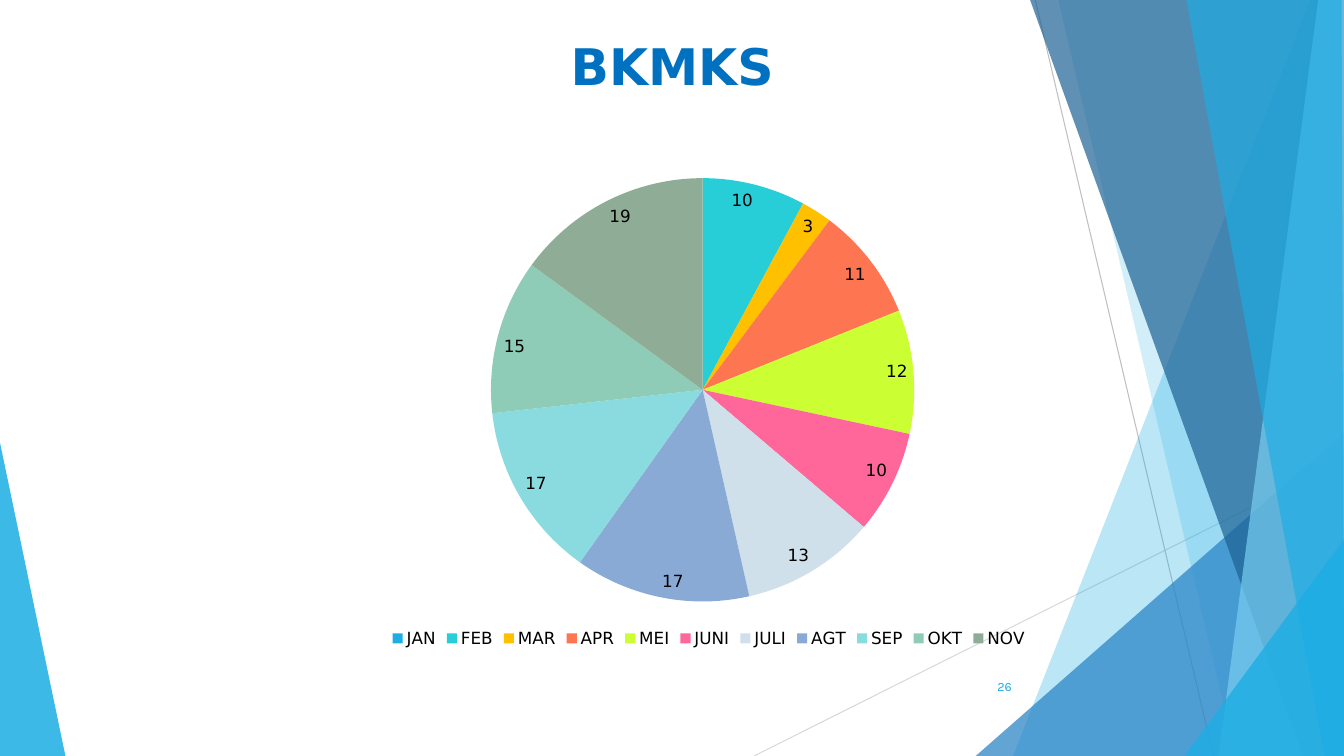
import pptx
import pptx.chart.data
import pptx.dml.color
import pptx.enum.chart
import pptx.enum.shapes
import pptx.enum.text
import pptx.oxml
import pptx.oxml.ns
import pptx.util
from lxml import etree

Cm = pptx.util.Cm
Pt = pptx.util.Pt
qn = pptx.oxml.ns.qn

WIDTH, HEIGHT = 33.87, 19.05
HEADING_FONT, BODY_FONT = "DejaVu Sans", "Karla"
COLORS = {
    "sky": "1CADE4", "blue": "2683C6", "navy": "1D6294", "pale": "77CEEF",
    "title": "0070C0", "black": "000000", "line": "D9D9D9", "line_dark": "BFBFBF",
    "JAN": "1CADE4", "FEB": "27CED7", "MAR": "FFC000", "APR": "FD7651",
    "MEI": "CCFF33", "JUNI": "FF6699", "JULI": "CFE0EA", "AGT": "8AAAD6",
    "SEP": "8ADBE0", "OKT": "8FCCB7", "NOV": "8FAD96",
}
MONTHS = {"JAN": 0, "FEB": 10, "MAR": 3, "APR": 11, "MEI": 12, "JUNI": 10,
          "JULI": 13, "AGT": 17, "SEP": 17, "OKT": 15, "NOV": 19}
BOTTOM_RIGHT = (WIDTH, HEIGHT)
TOP_RIGHT = (WIDTH, 0)
LEFT_FACET = ([(0, 11.15), (1.65, HEIGHT), (0, HEIGHT)], "sky", 85)
RIGHT_FACETS = [
    ([(33.02, 0), (25.53, HEIGHT), BOTTOM_RIGHT, TOP_RIGHT], "sky", 30),
    ([(26.67, 0), (31.14, HEIGHT), BOTTOM_RIGHT, TOP_RIGHT], "sky", 20),
    ([(24.59, HEIGHT), (WIDTH, 10.9), BOTTOM_RIGHT], "blue", 72),
    ([(25.96, 0), (32.84, HEIGHT), BOTTOM_RIGHT, TOP_RIGHT], "navy", 70),
    ([(33.22, 0), (30.71, HEIGHT), BOTTOM_RIGHT, TOP_RIGHT], "pale", 70),
    ([(29.9, 0), (33.38, HEIGHT), BOTTOM_RIGHT, (33.81, 0)], "sky", 65),
    ([(29.85, HEIGHT), (WIDTH, 13.59), BOTTOM_RIGHT], "sky", 80),
]


def rgb(name):
    return pptx.dml.color.RGBColor.from_string(COLORS[name])


def set_font(font, name, size, color, bold=False):
    font.name = name
    font.size = Pt(size)
    font.bold = bold
    font.color.rgb = rgb(color)


def add_facet(s, points, color, opacity):
    corners = [(Cm(x), Cm(y)) for x, y in points]
    builder = s.shapes.build_freeform(*corners[0])
    builder.add_line_segments(corners[1:], close=True)
    sp = builder.convert_to_shape()
    sp.shadow.inherit = False
    sp.line.fill.background()
    sp.fill.solid()
    sp.fill.fore_color.rgb = rgb(color)
    clr = sp.element.spPr.find(qn("a:solidFill")).find(qn("a:srgbClr"))
    etree.SubElement(clr, qn("a:alpha"), val=str(opacity * 1000))


def add_line(s, x1, y1, x2, y2, color):
    line = s.shapes.add_connector(pptx.enum.shapes.MSO_CONNECTOR.STRAIGHT,
                                  Cm(x1), Cm(y1), Cm(x2), Cm(y2))
    line.line.color.rgb = rgb(color)
    line.line.width = Pt(0.75)
    etree.SubElement(line.element.spPr, qn("a:effectLst"))


def add_title(s, text):
    title = s.shapes.title
    title.element.getparent().append(title.element)
    title.left, title.top, title.width, title.height = Cm(1.7), Cm(0.76), Cm(30.48), Cm(3.18)
    tf = title.text_frame
    tf.text = text
    tf.auto_size = pptx.enum.text.MSO_AUTO_SIZE.NONE
    tf.vertical_anchor = pptx.enum.text.MSO_ANCHOR.TOP
    p = tf.paragraphs[0]
    p.alignment = pptx.enum.text.PP_ALIGN.CENTER
    set_font(p.runs[0].font, HEADING_FONT, 36, "title", True)


def set_plot_layout(chart, **fractions):
    plot_area = chart.element.find(qn("c:chart")).find(qn("c:plotArea"))
    layout = plot_area.find(qn("c:layout"))
    if layout is None:
        layout = etree.Element(qn("c:layout"))
        plot_area.insert(0, layout)
    manual = etree.SubElement(layout, qn("c:manualLayout"))
    settings = {"layoutTarget": "inner", "xMode": "edge", "yMode": "edge", **fractions}
    for tag, value in settings.items():
        etree.SubElement(manual, qn("c:" + tag), val=str(value))


def add_pie(s, values):
    data = pptx.chart.data.CategoryChartData()
    data.categories = list(values)
    data.add_series("Series 1", list(values.values()))
    chart = s.shapes.add_chart(pptx.enum.chart.XL_CHART_TYPE.PIE, Cm(2.62), Cm(3.84),
                               Cm(30.48), Cm(12.6), data).chart
    chart.has_title = False
    set_font(chart.font, BODY_FONT, 18, "black")
    set_plot_layout(chart, x=0.32, y=0.05, w=0.35, h=0.85)
    chart.has_legend = True
    chart.legend.position = pptx.enum.chart.XL_LEGEND_POSITION.BOTTOM
    chart.legend.include_in_layout = False
    set_font(chart.legend.font, HEADING_FONT, 12, "black")
    plot = chart.plots[0]
    plot.vary_by_categories = True
    plot.has_data_labels = True
    labels = plot.data_labels
    labels.show_value = True
    labels.show_percentage = False
    labels.position = pptx.enum.chart.XL_LABEL_POSITION.INSIDE_END
    set_font(labels.font, HEADING_FONT, 12, "black")
    for i, month in enumerate(values):
        fill = plot.series[0].points[i].format.fill
        fill.solid()
        fill.fore_color.rgb = rgb(month)


def add_page_number(s, number):
    tf = s.shapes.add_textbox(Cm(23.85), Cm(16.79), Cm(1.9), Cm(1.02)).text_frame
    tf.word_wrap = True
    tf.vertical_anchor = pptx.enum.text.MSO_ANCHOR.MIDDLE
    tf.text = number
    p = tf.paragraphs[0]
    p.alignment = pptx.enum.text.PP_ALIGN.RIGHT
    set_font(p.runs[0].font, BODY_FONT, 9, "sky")


def main():
    prs = pptx.Presentation()
    prs.slide_width, prs.slide_height = Cm(WIDTH), Cm(HEIGHT)
    s = prs.slides.add_slide(prs.slide_layouts[5])
    add_facet(s, *LEFT_FACET)
    add_line(s, 19, HEIGHT, WIDTH, 11.61, "line")
    add_line(s, 26.09, 0, 30.58, HEIGHT, "line_dark")
    for facet in RIGHT_FACETS:
        add_facet(s, *facet)
    add_title(s, "BKMKS")
    add_pie(s, MONTHS)
    add_page_number(s, "26")
    prs.save("out.pptx")


if __name__ == "__main__":
    main()
